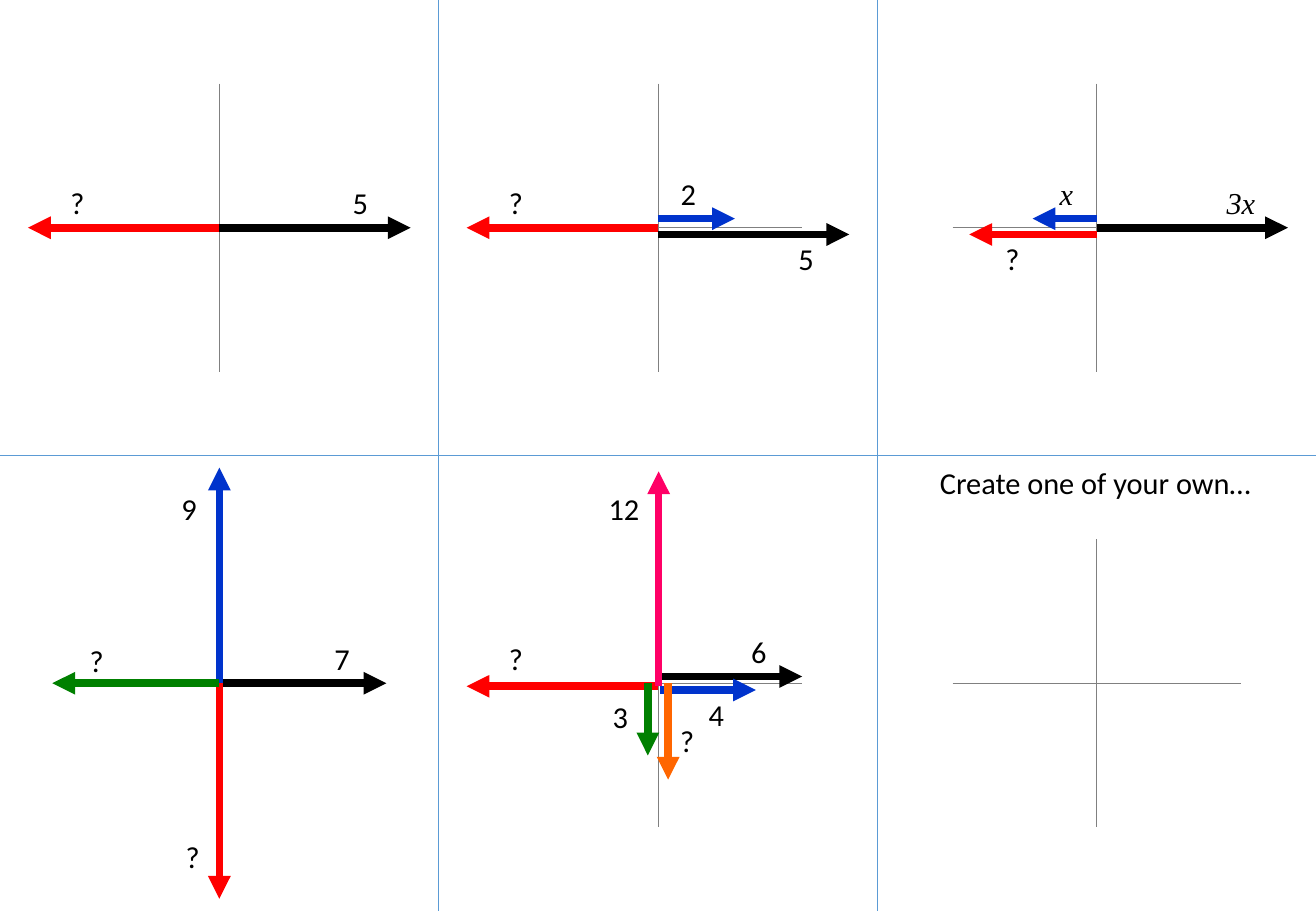
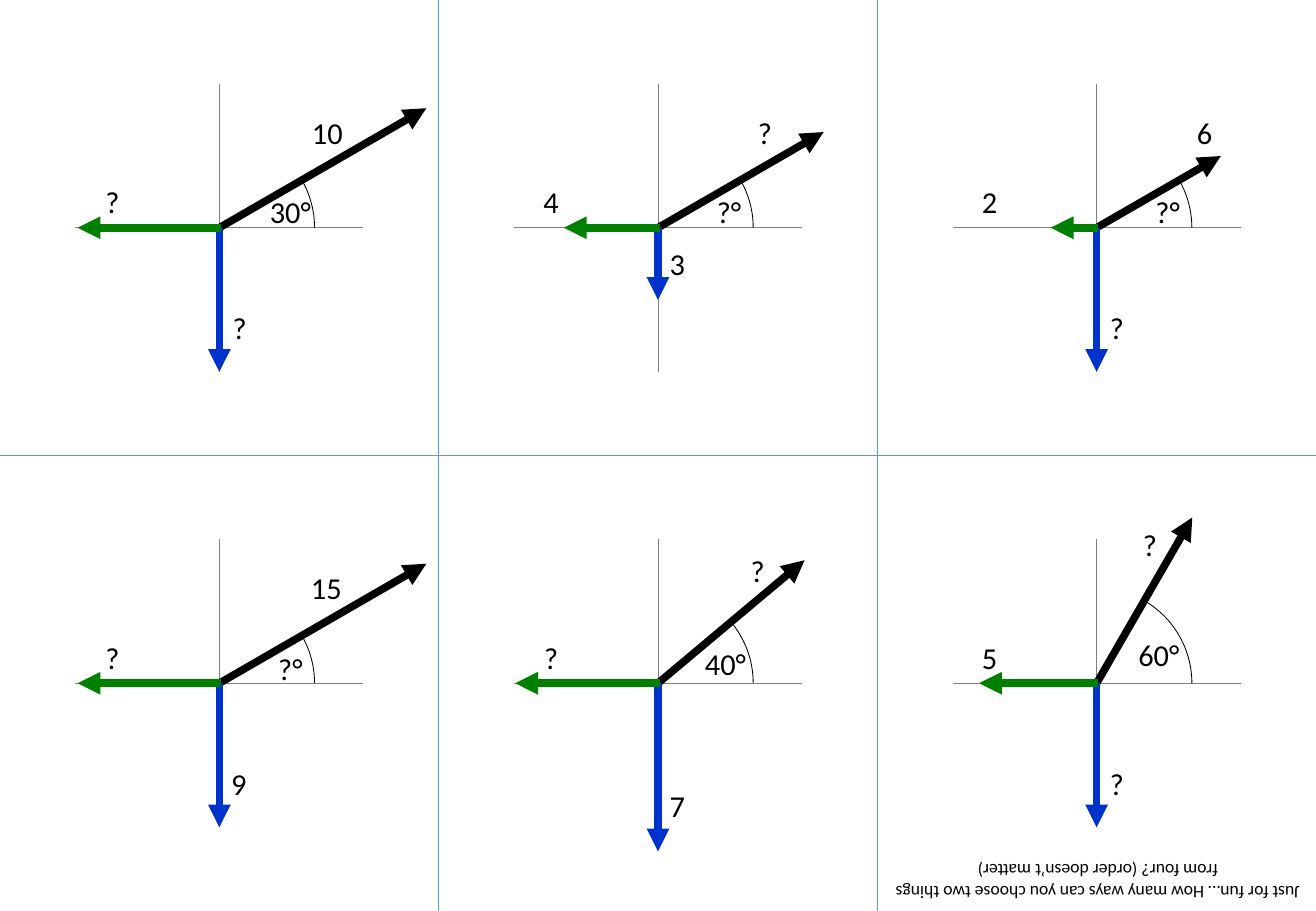
from math import cos, radians, sin

from lxml.etree import SubElement
from pptx import Presentation
from pptx.dml.color import RGBColor
from pptx.enum.shapes import MSO_CONNECTOR as Connector, MSO_SHAPE as Preset
from pptx.enum.text import MSO_ANCHOR as Anchor, MSO_AUTO_SIZE as AutoSize, PP_ALIGN as Align
from pptx.oxml.ns import qn
from pptx.util import Pt

PAGE_W, PAGE_H = 780, 540
COLS, ROWS = 3, 2
CELL_W, CELL_H = PAGE_W / COLS, PAGE_H / ROWS
AXIS, ARC = 85.4, 56.5
LABEL_W, ANGLE_W, LABEL_H = 39.6, 51.8, 28.8
CAPTION_W = 258.5
SANS, MATHS = "Calibri", "Times New Roman"
BLACK, WHITE, GREY, DIVIDER = "000000", "FFFFFF", "808080", "5B9BD5"
RED, BLUE, GREEN, PINK, ORANGE = "FF0000", "0033CC", "008000", "FF0066", "FF6600"

BALANCES = [
    ([(BLACK, 0, 0, 113.4, 0), (RED, 0, 0, -113.4, 0)],
     [("5", 83.5, -14.8), ("?", -84.2, -14.8)]),
    ([(BLACK, 0, 4, 113.4, 4), (RED, 0, 0, -113.4, 0), (BLUE, 0, -5.4, 45.6, -5.4)],
     [("5", 87.8, 18.4), ("?", -84.2, -14.8), ("2", 18, -20.5)]),
    ([(BLACK, 0, 0, 113.4, 0), (BLUE, 0, -5.4, -38, -5.4), (RED, 0, 4, -75.5, 4)],
     [("x", -18, -20.5), ("?", -50, 18.4), ("3x", 85.5, -14.8)]),
    ([(BLACK, 0, 0, 99, 0), (BLUE, 0, 0, 0, -127.8),
      (RED, 0, 0, 0, 127.8), (GREEN, 0, 0, -99, 0)],
     [("7", 72.7, -14.8), ("?", -72.7, -13.3), ("9", -18, -103.3), ("?", -15.8, 102.6)]),
    ([(BLACK, 0, -4, 85.4, -4), (BLUE, 1, 4, 58, 4), (RED, 0, 1.8, -113.4, 1.8),
      (GREEN, -6, 0, -6, 42.8), (PINK, 0.4, 1.8, 0.4, -125.6), (ORANGE, 6, 0, 6, 57.2)],
     [("12", -20.2, -103.3), ("?", -84.2, -14.8), ("6", 59.8, -19.1),
      ("3", -22.3, 19.8), ("?", 17.3, 34.2), ("4", 34.6, 18.4)]),
    ([], []),
]

TRIANGLES = [
    (30, 141.7, 84, 85.4,
     [("10", 64, -56.5), ("30°", 42.1, -9.7), ("?", -63.4, -15.5), ("?", 12, 59.4)]),
    (30, 113.4, 55.8, 42.8,
     [("?", 63.4, -56.5), ("?°", 42.1, -9.7), ("4", -63.4, -15.5), ("3", 11.5, 21.2)]),
    (30, 85, 27.2, 85.4,
     [("6", 64, -56.5), ("?°", 42.1, -9.7), ("2", -63.4, -15.5), ("?", 12, 59.4)]),
    (30, 141.7, 84, 85.4,
     [("15", 63.4, -56.5), ("?°", 42.1, -9), ("?", -63.4, -15.5), ("9", 11.5, 59.4)]),
    (40, 113.4, 84.6, 99.7,
     [("?", 59, -66.6), ("40°", 40, -11.9), ("?", -63.4, -15.5), ("7", 11.5, 72.4)]),
    (60, 113.4, 69.7, 85.4,
     [("?", 31.5, -82.4), ("60°", 36.9, -16.9), ("5", -63.4, -15.5), ("?", 12, 59.4)]),
]


def colour(value):
    """Turn a hex string into a colour."""
    return RGBColor.from_string(value)


def cell_corner(index):
    """Return the top left corner of a numbered cell."""
    row, col = divmod(index, COLS)
    return col * CELL_W, row * CELL_H


def cell_origin(index):
    """Return the centre of a numbered cell."""
    left, top = cell_corner(index)
    return left + CELL_W / 2, top + CELL_H / 2


def add_line(shapes, start, end, ink, weight=0.5, arrow=False):
    """Draw a straight line, with an arrowhead at its end if asked."""
    line = shapes.add_connector(Connector.STRAIGHT, *map(Pt, start + end))
    line.line.color.rgb = colour(ink)
    line.line.width = Pt(weight)
    properties = line._element.spPr
    if arrow:
        SubElement(properties.find(qn("a:ln")), qn("a:tailEnd"), type="triangle")
    SubElement(properties, qn("a:effectLst"))


def add_vector(page, origin, ink, x1, y1, x2, y2):
    """Draw a thick arrow placed relative to the origin."""
    x, y = origin
    add_line(page.shapes, (x + x1, y + y1), (x + x2, y + y2), ink, 4.5, True)


def write(shape, text, size=18, font=SANS, italic=False):
    """Put one centred line of text into a shape."""
    frame = shape.text_frame
    frame.word_wrap = True
    frame.auto_size = AutoSize.SHAPE_TO_FIT_TEXT
    frame.vertical_anchor = Anchor.TOP
    para = frame.paragraphs[0]
    para.alignment = Align.CENTER
    span = para.add_run()
    span.text = text
    span.font.size = Pt(size)
    span.font.name = font
    span.font.italic = italic
    span.font.color.rgb = colour(BLACK)


def add_label(page, origin, text, dx, dy):
    """Centre a label at an offset from the origin."""
    width = ANGLE_W if text.endswith("°") else LABEL_W
    left, top = origin[0] + dx - width / 2, origin[1] + dy - LABEL_H / 2
    box = page.shapes.add_textbox(Pt(left), Pt(top), Pt(width), Pt(LABEL_H))
    is_variable = text.endswith("x")
    write(box, text, font=MATHS if is_variable else SANS, italic=is_variable)


def add_caption(page, corner, dx, dy, height, text, size, rotation=0):
    """Write a caption on a white panel placed from the corner of a cell."""
    left, top = corner[0] + dx, corner[1] + dy
    panel = page.shapes.add_shape(
        Preset.RECTANGLE, Pt(left), Pt(top), Pt(CAPTION_W), Pt(height))
    panel.shadow.inherit = False
    panel.fill.solid()
    panel.fill.fore_color.rgb = colour(WHITE)
    panel.line.fill.background()
    panel.rotation = rotation
    write(panel, text, size)


def add_grid(page):
    """Divide the page into cells and draw the axes of each."""
    for row in range(1, ROWS):
        add_line(page.shapes, (0, row * CELL_H), (PAGE_W, row * CELL_H), DIVIDER)
    for col in range(1, COLS):
        add_line(page.shapes, (col * CELL_W, 0), (col * CELL_W, PAGE_H), DIVIDER)
    for index in range(ROWS * COLS):
        x, y = cell_origin(index)
        axes = page.shapes.add_group_shape().shapes
        add_line(axes, (x - AXIS, y), (x + AXIS, y), GREY)
        add_line(axes, (x, y - AXIS), (x, y + AXIS), GREY)


def add_balance(page, origin, vectors, labels):
    """Draw vectors along the axes with their labels."""
    for vector in vectors:
        add_vector(page, origin, *vector)
    for label in labels:
        add_label(page, origin, *label)


def add_triangle(page, origin, angle, length, left, down, labels):
    """Draw a sloping vector, its angle, two balancing vectors and labels."""
    x, y = origin
    turn = radians(angle)
    add_vector(page, origin, BLACK, 0, 0, length * cos(turn), -length * sin(turn))
    arc = page.shapes.add_shape(
        Preset.ARC, Pt(x - ARC), Pt(y - ARC), Pt(2 * ARC), Pt(2 * ARC))
    arc.shadow.inherit = False
    arc.adjustments[0] = (360 - angle) * 0.6
    arc.fill.background()
    arc.line.color.rgb = colour(BLACK)
    arc.line.width = Pt(0.5)
    add_balance(page, origin, [(BLUE, 0, 0, 0, down), (GREEN, 1, 0, -left, 0)], labels)


def build_balances(page):
    """Build the page of vectors along the axes."""
    add_caption(page, cell_corner(5), 0, 1.4, LABEL_H, "Create one of your own…", 18)
    add_grid(page)
    for index, balance in enumerate(BALANCES):
        add_balance(page, cell_origin(index), *balance)


def build_triangles(page):
    """Build the page of sloping vectors."""
    add_grid(page)
    for index, triangle in enumerate(TRIANGLES):
        add_triangle(page, cell_origin(index), *triangle)
    add_caption(
        page, cell_corner(5), 1.3, 236.9, 32.4,
        "Just for fun… How many ways can you choose two things from four? "
        "(order doesn’t matter)", 10.5, 180)


def main():
    """Build the deck and save it."""
    deck = Presentation()
    deck.slide_width, deck.slide_height = Pt(PAGE_W), Pt(PAGE_H)
    for build in (build_balances, build_triangles):
        build(deck.slides.add_slide(deck.slide_layouts[6]))
    deck.save("out.pptx")


if __name__ == "__main__":
    main()
